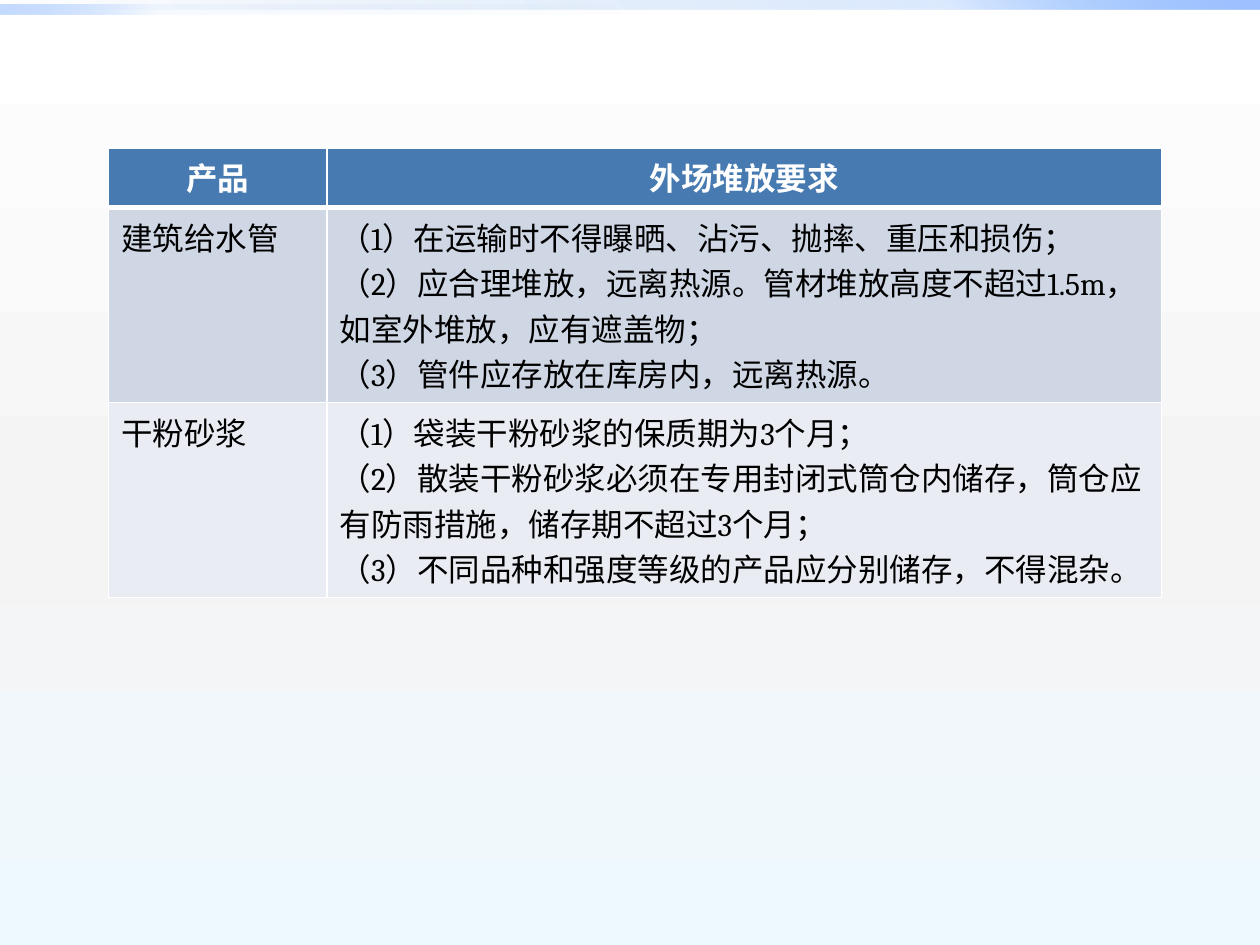
from lxml.etree import SubElement
from pptx import Presentation
from pptx.dml.color import RGBColor
from pptx.enum.lang import MSO_LANGUAGE_ID
from pptx.enum.shapes import MSO_SHAPE
from pptx.enum.text import PP_ALIGN
from pptx.oxml.ns import qn
from pptx.util import Cm, Pt

COLORS = {
    "white": "FFFFFF", "black": "000000", "grey": "F4F4F4", "ice": "EEF9FF",
    "deep": "0058B7", "mid": "4F95FF", "pale": "9EC2FF",
    "header": "477AB1", "band_dark": "CFD7E4", "band_light": "E9ECF2",
}
HEADINGS = ["产品", "外场堆放要求"]
STORAGE_RULES = [
    ("建筑给水管", [
        "（1）在运输时不得曝晒、沾污、抛摔、重压和损伤；",
        "（2）应合理堆放，远离热源。管材堆放高度不超过1.5m，如室外堆放，应有遮盖物；",
        "（3）管件应存放在库房内，远离热源。",
    ]),
    ("干粉砂浆", [
        "（1）袋装干粉砂浆的保质期为3个月；",
        "（2）散装干粉砂浆必须在专用封闭式筒仓内储存，筒仓应有防雨措施，储存期不超过3个月；",
        "（3）不同品种和强度等级的产品应分别储存，不得混杂。",
    ]),
]


def write_text(frame, lines, color="black", bold=False, align=PP_ALIGN.LEFT, size=18, font="Cambria"):
    for index, line in enumerate(lines):
        paragraph = frame.paragraphs[0] if index == 0 else frame.add_paragraph()
        paragraph.alignment = align
        run = paragraph.add_run()
        run.text = line
        run.font.name = font
        run.font.size = Pt(size)
        run.font.bold = bold
        run.font.language_id = MSO_LANGUAGE_ID.SIMPLIFIED_CHINESE
        run.font.color.rgb = RGBColor.from_string(COLORS[color])


def set_gradient(fill, owner, stops, angle):
    """Fill with (position, colour, opacity) stops in percent, angle clockwise."""
    fill.gradient()
    gradient = owner.find(".//" + qn("a:gradFill"))
    for child in list(gradient):
        gradient.remove(child)
    stop_list = SubElement(gradient, qn("a:gsLst"))
    for position, color, opacity in stops:
        stop = SubElement(stop_list, qn("a:gs"), pos=str(position * 1000))
        tint = SubElement(stop, qn("a:srgbClr"), val=COLORS[color])
        if opacity < 100:
            SubElement(tint, qn("a:alpha"), val=str(opacity * 1000))
    SubElement(gradient, qn("a:lin"), ang=str(angle * 60000), scaled="0")


def set_borders(cell, bottom):
    properties = cell._tc.get_or_add_tcPr()
    widths = {"a:lnL": 1, "a:lnR": 1, "a:lnT": 1, "a:lnB": bottom}
    for index, (side, width) in enumerate(widths.items()):
        border = SubElement(properties, qn(side), w=str(Pt(width)))
        SubElement(SubElement(border, qn("a:solidFill")), qn("a:srgbClr"), val=COLORS["white"])
        properties.insert(index, border)


class StorageSlide:
    def __init__(self, presentation):
        self.slide = presentation.slides.add_slide(presentation.slide_layouts[6])

    def background(self, stops, angle):
        set_gradient(self.slide.background.fill, self.slide.element, stops, angle)

    def bar(self, top, width, stops, angle):
        bar = self.slide.shapes.add_shape(MSO_SHAPE.RECTANGLE, 0, Cm(top), Cm(width), Cm(0.2))
        bar.shadow.inherit = False
        bar.line.fill.background()
        set_gradient(bar.fill, bar._element.spPr, stops, angle)

    def cell(self, cell, lines, fill, bottom=1, **text_format):
        cell.fill.solid()
        cell.fill.fore_color.rgb = RGBColor.from_string(COLORS[fill])
        set_borders(cell, bottom)
        write_text(cell.text_frame, lines, **text_format)

    def table(self, left, top, widths, heights):
        table = self.slide.shapes.add_table(
            len(heights), len(widths), Cm(left), Cm(top), Cm(sum(widths)), Cm(sum(heights))).table
        for column, width in zip(table.columns, widths):
            column.width = Cm(width)
        for row, height in zip(table.rows, heights):
            row.height = Cm(height)
        for column, heading in enumerate(HEADINGS):
            self.cell(table.cell(0, column), [heading], "header", bottom=3,
                      color="white", bold=True, align=PP_ALIGN.CENTER)
        for row, (product, rules) in enumerate(STORAGE_RULES, start=1):
            band = "band_dark" if row % 2 else "band_light"
            self.cell(table.cell(row, 0), [product], band)
            self.cell(table.cell(row, 1), rules, band)


def main():
    presentation = Presentation()
    presentation.slide_width, presentation.slide_height = Cm(25.4), Cm(19.05)
    page = StorageSlide(presentation)
    page.background([(0, "white", 100), (55, "grey", 100), (100, "ice", 100)], 90)
    page.bar(0, 25.4, [(0, "deep", 0), (75, "mid", 20), (100, "pale", 100)], 315)
    page.bar(0.1, 12.7, [(0, "deep", 0), (75, "mid", 5), (100, "pale", 60)], 135)
    page.table(2.19, 2.98, widths=[4.4, 16.83], heights=[1.2, 2.97, 2.74])
    presentation.save("out.pptx")


if __name__ == "__main__":
    main()
